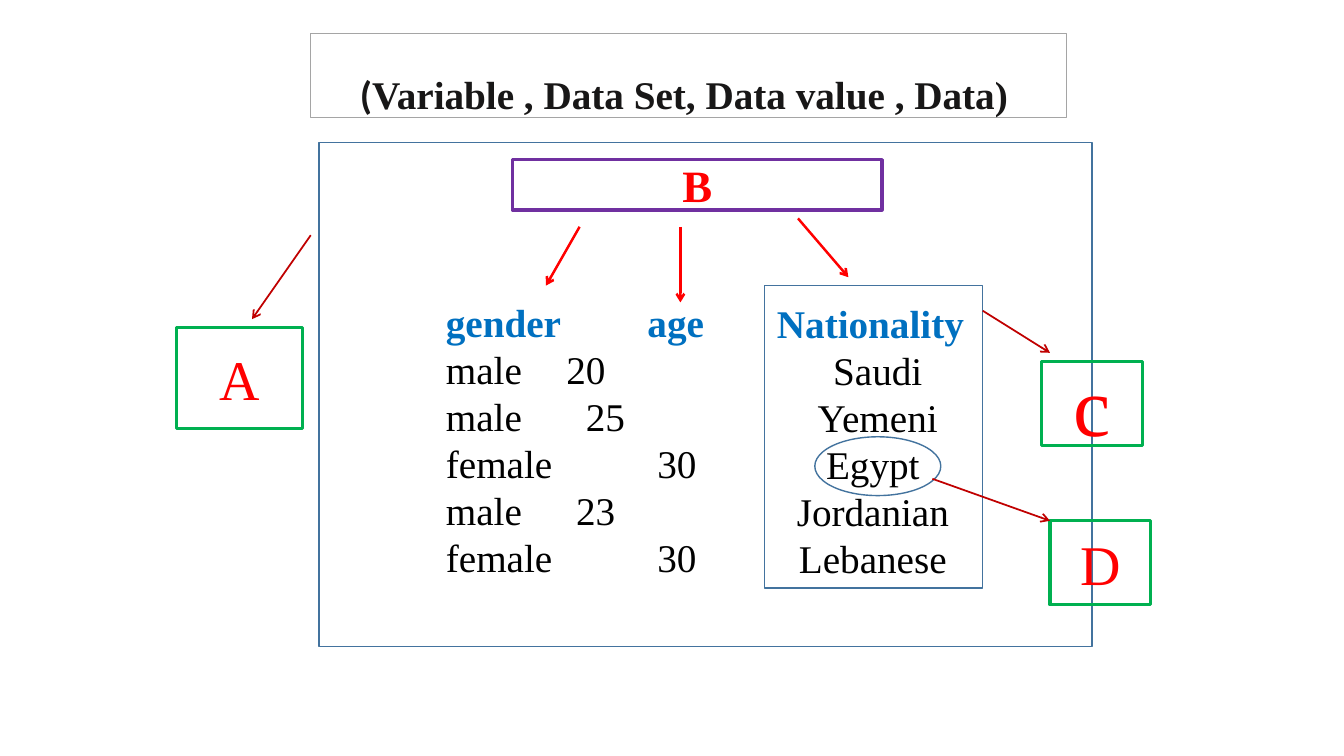
from lxml import etree
from pptx import Presentation
from pptx.dml.color import RGBColor
from pptx.enum.shapes import MSO_CONNECTOR, MSO_SHAPE
from pptx.enum.text import MSO_ANCHOR, PP_ALIGN
from pptx.oxml.ns import qn
from pptx.util import Pt

STRAIGHT = MSO_CONNECTOR.STRAIGHT
RECTANGLE, OVAL = MSO_SHAPE.RECTANGLE, MSO_SHAPE.OVAL
MIDDLE, BOTTOM = MSO_ANCHOR.MIDDLE, MSO_ANCHOR.BOTTOM
LEFT, CENTER = PP_ALIGN.LEFT, PP_ALIGN.CENTER
SERIF = "Times New Roman"
RED, DARK_RED, BLUE, BLACK = "FF0000", "C00000", "0070C0", "000000"
WHITE, STEEL, GREEN, PURPLE = "FFFFFF", "43739E", "00B050", "7030A0"
GREY, INK = "A5A5A5", "181717"
BODY_SIZE, LINE_HEIGHT = 28, 33.6

# Each row: category, number, distance of the number from the left edge
PEOPLE = [("gender", "age", 144), ("male", "20", 86), ("male", "25", 100),
          ("female", "30", 151), ("male", "23", 93), ("female", "30", 151)]
NATIONALITIES = ["Nationality", "Saudi", "Yemeni", "Egypt ", "Jordanian ", "Lebanese "]


def color(hex_string):
    return RGBColor.from_string(hex_string)


def inside(box, left, top, width, height):
    """Turn offsets within a box into a box on the page."""
    return box[0] + left, box[1] + top, width, height


def set_font(font, size, hex_string, bold=False, name=SERIF):
    font.name, font.size, font.bold = name, Pt(size), bold
    font.color.rgb = color(hex_string)


def add_outline(page, box, line, weight=1, fill=None, kind=RECTANGLE):
    shape = page.shapes.add_shape(kind, *map(Pt, box))
    shape.shadow.inherit = False
    if fill:
        shape.fill.solid()
        shape.fill.fore_color.rgb = color(fill)
    else:
        shape.fill.background()
    shape.line.color.rgb = color(line)
    shape.line.width = Pt(weight)
    return shape


def add_letter(page, box, letter, size, line=GREEN, bold=False, fill=None):
    shape = add_outline(page, box, line, 2.25, fill)
    shape.text_frame.vertical_anchor = MIDDLE
    para = shape.text_frame.paragraphs[0]
    para.text, para.alignment = letter, CENTER
    set_font(para.font, size, RED, bold)


def add_arrow(page, box, start, end, line, weight):
    """Draw an arrow between two points given relative to the box."""
    points = [Pt(box[axis] + point[axis]) for point in (start, end) for axis in (0, 1)]
    arrow = page.shapes.add_connector(STRAIGHT, *points)
    arrow.line.color.rgb = color(line)
    arrow.line.width = Pt(weight)
    etree.SubElement(arrow.line._get_or_add_ln(), qn("a:tailEnd"), type="arrow")
    etree.SubElement(arrow._element.spPr, qn("a:effectLst"))


def add_lines(page, box, lines):
    """Add a text box with a blue heading line; return its paragraphs."""
    frame = page.shapes.add_textbox(*map(Pt, box)).text_frame
    frame.word_wrap = True
    frame.margin_left = frame.margin_right = 0
    frame.text = "\n".join(lines)
    for index, para in enumerate(frame.paragraphs):
        para.line_spacing = Pt(LINE_HEIGHT)
        heading = index == 0
        set_font(para.font, BODY_SIZE, BLUE if heading else BLACK, heading)
    return frame.paragraphs


def add_title(page, box):
    shape = add_outline(page, box, GREY, fill=WHITE)
    frame = shape.text_frame
    frame.vertical_anchor, frame.margin_bottom = BOTTOM, 0
    para = frame.paragraphs[0]
    para.alignment = CENTER
    for text, name in [("(", "Calibri"), ("Variable , Data Set, Data value , Data) ", SERIF)]:
        span = para.add_run()
        span.text = text
        set_font(span.font, BODY_SIZE, INK, True, name)


def add_people(page, box):
    rows = [f"{category}\t{number}" for category, number, _ in PEOPLE]
    for para, (_, _, stop) in zip(add_lines(page, box, rows), PEOPLE):
        properties = para._p.get_or_add_pPr()
        tabs = etree.Element(qn("a:tabLst"))
        etree.SubElement(tabs, qn("a:tab"), pos=str(Pt(stop)), algn="l")
        properties.find(qn("a:defRPr")).addprevious(tabs)


def add_nationalities(page, box):
    add_outline(page, box, STEEL)
    add_outline(page, inside(box, 36, 108, 90, 42), STEEL, kind=OVAL)
    paras = add_lines(page, inside(box, -5, 6, 172, 211), NATIONALITIES)
    for para in paras:
        para.alignment = CENTER
    paras[0].alignment = LEFT
    paras[0]._p.get_or_add_pPr().set("marL", str(Pt(14)))


def add_data_set(page, box):
    add_outline(page, box, STEEL)
    add_letter(page, inside(box, 138, 12, 264, 36), "B", 32, PURPLE, True, WHITE)
    for start, end in [((186, 60), (162, 102)), ((258, 60), (258, 114)),
                       ((342, 54), (378, 96))]:
        add_arrow(page, box, start, end, RED, 1.75)
    add_people(page, inside(box, 90.5, 107.5, 220, 209))
    add_nationalities(page, inside(box, 318, 102, 156, 216))


def add_callouts(page, box):
    """Place the lettered labels around the data set box."""
    for letter, size, place in [("A", 40, (-102, 132, 90, 72)),
                                ("c", 60, (516, 156, 72, 60)),
                                ("D", 40, (522, 270, 72, 60))]:
        add_letter(page, inside(box, *place), letter, size)
    for start, end in [((-6, 66), (-48, 126)), ((474, 120), (522, 150)),
                       ((438, 240), (522, 270))]:
        add_arrow(page, box, start, end, DARK_RED, 1.25)


def main():
    deck = Presentation()
    deck.slide_width, deck.slide_height = Pt(960), Pt(540)
    page = deck.slides.add_slide(deck.slide_layouts[6])
    data_set_box = (228, 102, 552, 360)
    add_data_set(page, data_set_box)
    add_callouts(page, data_set_box)
    add_title(page, (222, 24, 540, 60))
    deck.save("out.pptx")


if __name__ == "__main__":
    main()
